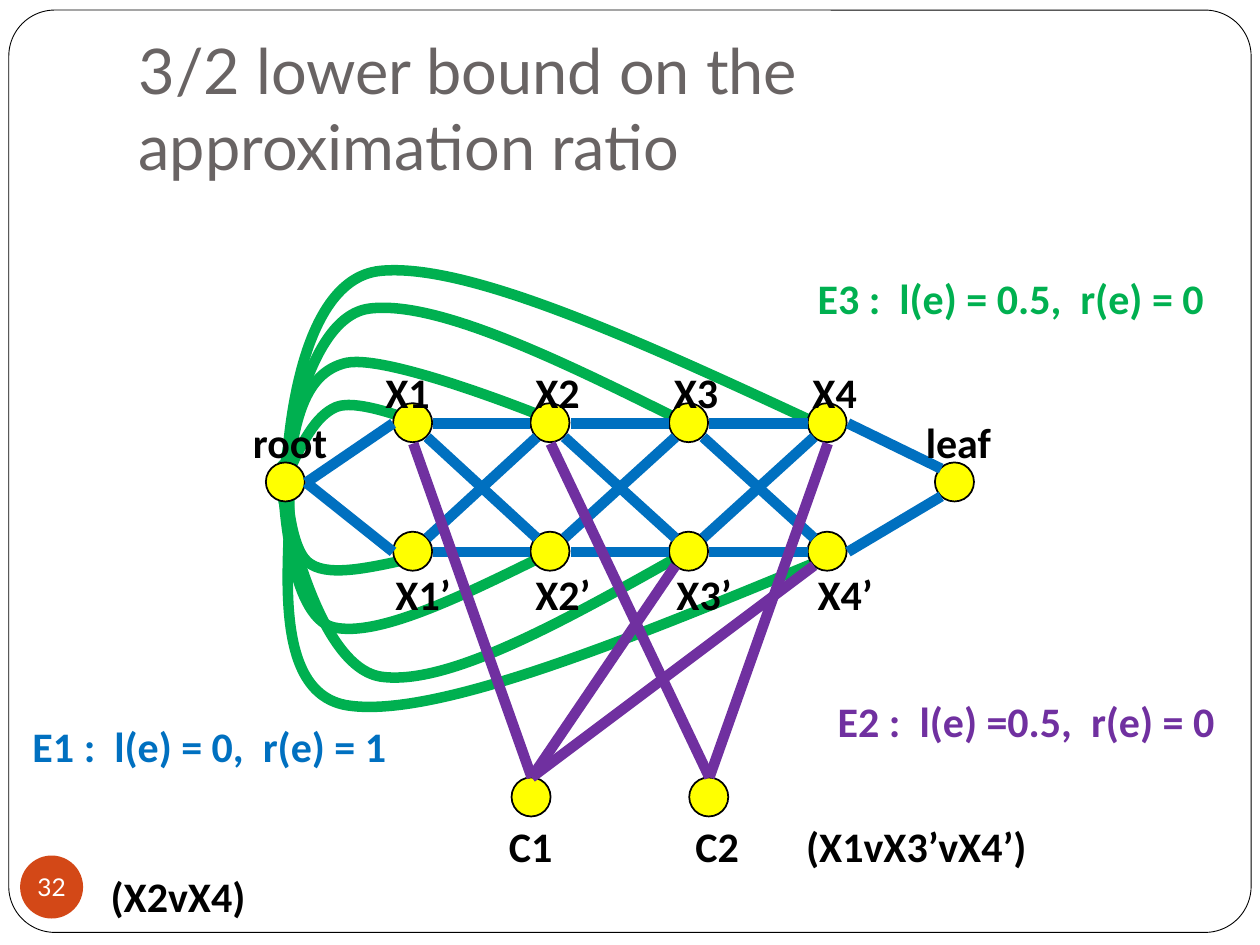
from dataclasses import dataclass
from lxml.etree import SubElement
from pptx import Presentation
from pptx.dml.color import RGBColor
from pptx.enum.shapes import MSO_CONNECTOR, MSO_SHAPE
from pptx.enum.text import MSO_ANCHOR, MSO_AUTO_SIZE, PP_ALIGN
from pptx.oxml.ns import qn
from pptx.util import Pt

PX = 9144


@dataclass(frozen=True)
class Theme:
    ink: str = "000000"
    paper: str = "FFFFFF"
    title: str = "696464"
    badge: str = "D34817"
    node: str = "FFFF00"
    e1: str = "0070C0"
    e2: str = "7030A0"
    e3: str = "00B050"
    head_font: str = "Lato"
    body_font: str = "Calibri"
    title_size: int = 36
    label_size: int = 24
    badge_size: int = 14
    edge: float = 6
    outline: float = 1
    frame: float = 0.5


@dataclass(frozen=True)
class Box:
    x: int
    y: int
    w: int
    h: int

    def inner(self, x, y, w, h):
        return Box(self.x + x, self.y + y, w, h)

    def emu(self):
        return [v * PX for v in (self.x, self.y, self.w, self.h)]


T = Theme()
RADIUS = 16
DIAGONAL = 11
NODE_SIZE = 31
SIDES = {
    "n": (0, -RADIUS), "s": (0, RADIUS), "e": (RADIUS, 0), "w": (-RADIUS, 0),
    "ne": (DIAGONAL, -DIAGONAL), "nw": (-DIAGONAL, -DIAGONAL),
    "se": (DIAGONAL, DIAGONAL), "sw": (-DIAGONAL, DIAGONAL),
}
COLUMNS = [128 + 329 * i // 3 for i in range(4)]
NODES = {"root": (27, 183), "leaf": (558, 183), "C1": (222, 433), "C2": (363, 433)}
for i, x in enumerate(COLUMNS, 1):
    NODES[f"X{i}"] = (x, 136)
    NODES[f"X{i}’"] = (x, 238)

CURVES = [
    [(458, 242), (303, 306), (148, 370), (77, 360), (5, 350), (37, 211), (28, 182),
     (20, 152), (27, 183), (27, 183)],
    [(347, 237), (251, 291), (156, 345), (102, 337), (48, 328), (23, 187), (23, 187)],
    [(238, 238), (169, 272), (101, 306), (65, 298), (29, 290), (25, 190), (25, 190)],
    [(128, 243), (96, 250), (63, 258), (47, 248), (30, 239), (28, 188), (28, 188)],
    [(457, 140), (315, 74), (173, 8), (102, 15), (30, 22), (27, 180), (27, 180)],
    [(347, 137), (247, 87), (147, 38), (93, 45), (40, 52), (25, 178), (25, 178)],
    [(28, 178), (34, 137), (40, 96), (75, 88), (110, 81), (237, 133), (237, 133)],
    [(28, 177), (39, 153), (50, 130), (67, 123), (84, 116), (130, 135), (130, 135)],
]
CLAUSE_EDGES = [
    ("X1", "s", "C1"), ("X3’", "sw", "C1"), ("X4’", "sw", "C1"),
    ("X2", "s", "C2"), ("X4", "s", "C2"),
]
LABELS = [
    (86, [("X1", 96), ("X2", 215), ("X3", 325), ("X4", 435)]),
    (126, [("root", -9), ("leaf", 525)]),
    (246, [("X1’", 104), ("X2’", 215), ("X3’", 327), ("X4’", 439)]),
    (446, [("C1", 194), ("C2", 342), ("(X1vX3’vX4’)", 430)]),
    (486, [("(X2vX4)", -122)]),
]


def rgb(value):
    return RGBColor.from_string(value)


def style_line(line, color, width):
    line.color.rgb = rgb(color)
    line.width = Pt(width)


def style_text(tf, font, size, color, bold=False):
    for p in tf.paragraphs:
        for r in p.runs:
            r.font.name = font
            r.font.size = Pt(size)
            r.font.bold = bold
            r.font.color.rgb = rgb(color)


def add_label(s, box, text, color):
    tf = s.shapes.add_textbox(*box.emu()).text_frame
    tf.text = text
    tf.word_wrap = False
    style_text(tf, T.body_font, T.label_size, color, True)


def add_curve(s, box, points):
    points = [((box.x + x) * PX, (box.y + y) * PX) for x, y in points]
    builder = s.shapes.build_freeform(*points[0])
    builder.add_line_segments(points[1:], close=False)
    sp = builder.convert_to_shape()
    sp.shadow.inherit = False
    sp.fill.background()
    style_line(sp.line, T.e3, T.edge)
    path = sp.element.find(".//" + qn("a:path"))
    steps = path.findall(qn("a:lnTo"))
    for i in range(0, len(steps), 3):
        bezier = SubElement(path, qn("a:cubicBezTo"))
        for step in steps[i:i + 3]:
            bezier.append(step[0])
            path.remove(step)


def add_node(s, box, center):
    x, y = center
    sp = s.shapes.add_shape(
        MSO_SHAPE.OVAL,
        *box.inner(x - RADIUS, y - RADIUS, NODE_SIZE, NODE_SIZE).emu())
    sp.shadow.inherit = False
    sp.fill.solid()
    sp.fill.fore_color.rgb = rgb(T.node)
    style_line(sp.line, T.ink, T.outline)


def add_edge(s, box, start, start_side, end, end_side, color):
    ends = []
    for node, side in ((start, start_side), (end, end_side)):
        (x, y), (dx, dy) = NODES[node], SIDES[side]
        ends += [(box.x + x + dx) * PX, (box.y + y + dy) * PX]
    cxn = s.shapes.add_connector(MSO_CONNECTOR.STRAIGHT, *ends)
    style_line(cxn.line, color, T.edge)
    SubElement(cxn.element.spPr, qn("a:effectLst"))


def path_edges():
    edges = [("root", "e", "X1’", "w"), ("root", "e", "X1", "w"),
             ("X4", "e", "leaf", "nw"), ("leaf", "sw", "X4’", "e")]
    for i in range(1, 4):
        a, b = f"X{i}", f"X{i + 1}"
        edges += [(a, "e", b, "w"), (a + "’", "e", b + "’", "w"),
                  (a, "se", b + "’", "nw"), (b, "sw", a + "’", "ne")]
    return edges


def add_graph(s, box):
    for points in CURVES:
        add_curve(s, box, points)
    for center in NODES.values():
        add_node(s, box, center)
    for edge in path_edges():
        add_edge(s, box, *edge, T.e1)
    for start, side, clause in CLAUSE_EDGES:
        add_edge(s, box, start, side, clause, "n", T.e2)
    for y, row in LABELS:
        for text, x in row:
            add_label(s, box.inner(x, y, 40 + 15 * len(text), 50), text, T.ink)


def add_legend(s, box):
    add_label(s, box.inner(639, 211, 329, 50), "E3 :  l(e) = 0.5,  r(e) = 0", T.e3)
    add_label(s, box.inner(16, 567, 303, 50), "E1 :  l(e) = 0,  r(e) = 1", T.e1)
    add_label(s, box.inner(655, 547, 322, 50), "E2 :  l(e) =0.5,  r(e) = 0", T.e2)


def add_frame(s, box):
    sp = s.shapes.add_shape(MSO_SHAPE.ROUNDED_RECTANGLE, *box.emu())
    sp.adjustments[0] = 0.05
    sp.shadow.inherit = False
    sp.fill.background()
    style_line(sp.line, T.ink, T.frame)


def add_title(s, box):
    sp = s.shapes.title
    sp.left, sp.top, sp.width, sp.height = box.emu()
    tf = sp.text_frame
    tf.text = "3/2 lower bound on the approximation ratio"
    tf.auto_size = MSO_AUTO_SIZE.NONE
    tf.word_wrap = True
    tf.vertical_anchor = MSO_ANCHOR.BOTTOM
    tf.margin_left = tf.margin_right = tf.margin_bottom = 10 * PX
    tf.margin_top = 5 * PX
    tf.paragraphs[0].alignment = PP_ALIGN.LEFT
    style_text(tf, T.head_font, T.title_size, T.title)


def add_badge(s, box):
    sp = s.shapes.add_shape(MSO_SHAPE.OVAL, *box.emu())
    sp.shadow.inherit = False
    sp.fill.solid()
    sp.fill.fore_color.rgb = rgb(T.badge)
    sp.line.fill.background()
    tf = sp.text_frame
    tf.text = "32"
    tf.word_wrap = False
    tf.vertical_anchor = MSO_ANCHOR.MIDDLE
    tf.margin_left = tf.margin_right = tf.margin_top = tf.margin_bottom = 0
    tf.paragraphs[0].alignment = PP_ALIGN.CENTER
    style_text(tf, T.head_font, T.badge_size, T.paper)


def main():
    page = Box(0, 0, 1000, 750)
    prs = Presentation()
    prs.slide_width, prs.slide_height = page.w * PX, page.h * PX
    s = prs.slides.add_slide(prs.slide_layouts[5])
    s.background.fill.solid()
    s.background.fill.fore_color.rgb = rgb(T.paper)
    add_frame(s, page.inner(7, 8, 986, 732))
    add_title(s, page.inner(100, 30, 850, 125))
    add_graph(s, page.inner(200, 200, 580, 450))
    add_legend(s, page)
    add_badge(s, page.inner(16, 679, 50, 50))
    prs.save("out.pptx")


if __name__ == "__main__":
    main()
